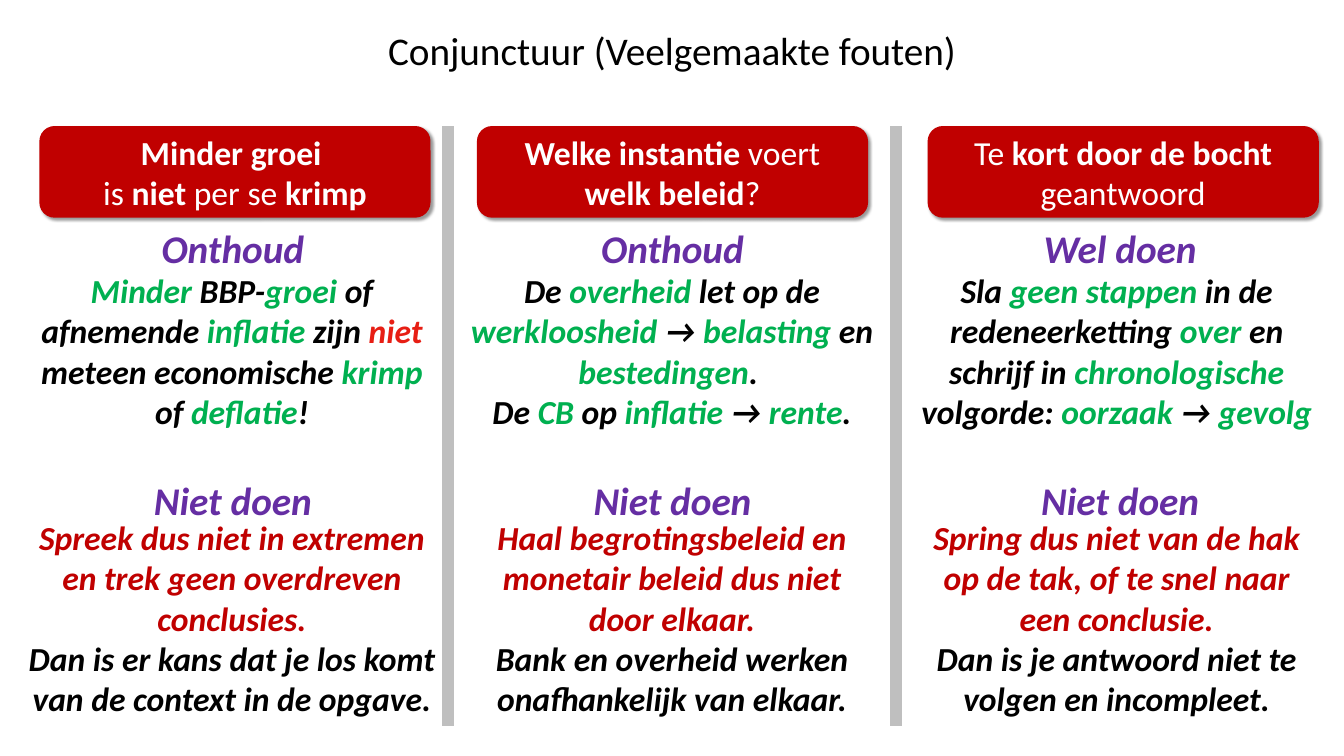
"""Build a slide on common mistakes about the business cycle."""
from dataclasses import dataclass

from lxml import etree
from pptx import Presentation
from pptx.dml.color import RGBColor
from pptx.enum.shapes import MSO_CONNECTOR, MSO_SHAPE
from pptx.enum.text import MSO_ANCHOR, PP_ALIGN
from pptx.oxml.ns import qn
from pptx.util import Inches, Pt

CENTER = PP_ALIGN.CENTER
MIDDLE = MSO_ANCHOR.MIDDLE
ROUNDED = MSO_SHAPE.ROUNDED_RECTANGLE
STRAIGHT = MSO_CONNECTOR.STRAIGHT


@dataclass(frozen=True)
class Theme:
    """Colours, type sizes and font of the slide."""
    font: str = "Calibri"
    large: int = 28
    body: int = 24
    black: str = "000000"
    white: str = "FFFFFF"
    crimson: str = "C00000"
    red: str = "E71E14"
    green: str = "00B050"
    purple: str = "652EA3"
    grey: str = "BFBFBF"

    def formats(self):
        """Return the format values of each text style."""
        header = {"size": self.body, "color": self.white}
        strong = {"size": self.body, "bold": True, "italic": True}
        return {
            "title": {"size": self.large, "color": self.black},
            "header": header,
            "header bold": {**header, "bold": True},
            "heading": {**strong, "size": self.large, "color": self.purple},
            "plain": {**strong, "color": self.black},
            "key": {**strong, "color": self.green},
            "not": {**strong, "color": self.red},
            "warning": {**strong, "color": self.crimson},
        }


class SlideBuilder:
    """Adds styled elements to the current slide."""

    def __init__(self, slide, theme):
        """Keep the slide and its style."""
        self.slide = slide
        self.theme = theme
        self.formats = theme.formats()

    def fill_text(self, frame, paragraphs):
        """Fill a frame with centred paragraphs of (style, text) spans."""
        frame.word_wrap = True
        for index, spans in enumerate(paragraphs):
            para = frame.add_paragraph() if index else frame.paragraphs[0]
            para.alignment = CENTER
            for style, text in spans:
                span = para.add_run()
                span.text = text
                span.font.name = self.theme.font
                for name, value in self.formats[style].items():
                    if name == "color":
                        span.font.color.rgb = RGBColor.from_string(value)
                    elif name == "size":
                        span.font.size = Pt(value)
                    else:
                        setattr(span.font, name, value)

    def text(self, left, top, width, height, paragraphs):
        """Add a text box."""
        lengths = map(Inches, (left, top, width, height))
        box = self.slide.shapes.add_textbox(*lengths)
        self.fill_text(box.text_frame, paragraphs)

    def header(self, left, top, width, height, paragraphs):
        """Add a rounded column header with a soft shadow."""
        lengths = map(Inches, (left, top, width, height))
        box = self.slide.shapes.add_shape(ROUNDED, *lengths)
        box.fill.solid()
        box.fill.fore_color.rgb = RGBColor.from_string(self.theme.crimson)
        box.line.fill.background()
        box.shadow.inherit = False
        effects = box._element.spPr.find(qn("a:effectLst"))
        shadow = etree.SubElement(
            effects, qn("a:outerShdw"), blurRad=str(Pt(2)), dist=str(Pt(2)),
            dir="2700000", algn="tl", rotWithShape="0")
        color = etree.SubElement(shadow, qn("a:srgbClr"), val=self.theme.black)
        etree.SubElement(color, qn("a:alpha"), val="40000")
        box.text_frame.vertical_anchor = MIDDLE
        self.fill_text(box.text_frame, paragraphs)

    def divider(self, left, top, bottom):
        """Add a thick vertical line between columns."""
        ends = map(Inches, (left, top, left, bottom))
        line = self.slide.shapes.add_connector(STRAIGHT, *ends)
        line.line.color.rgb = RGBColor.from_string(self.theme.grey)
        line.line.width = Pt(8.75)
        etree.SubElement(line._element.spPr, qn("a:effectLst"))


COLUMNS = [
    {
        "header_left": 0.39, "center": 2.31,
        "advice_box": (0.16, 4.28), "warning_box": (0.16, 4.28),
        "header": [
            [("header bold", "Minder groei ")],
            [("header", "is "), ("header bold", "niet"),
             ("header", " per se "), ("header bold", "krimp")]],
        "heading": "Onthoud",
        "advice": [
            [("key", "Minder"), ("plain", " BBP-"), ("key", "groei"),
             ("plain", " of afnemende "), ("key", "inflatie"),
             ("plain", " zijn "), ("not", "niet "),
             ("plain", "meteen economische "), ("key", "krimp"),
             ("plain", " of "), ("key", "deflatie"), ("plain", "!")]],
        "warning": "Spreek dus niet in extremen en trek geen overdreven conclusies.",
        "reason": "Dan is er kans dat je los komt van de context in de opgave.",
    },
    {
        "header_left": 4.73, "center": 6.67,
        "advice_box": (4.35, 4.63), "warning_box": (4.57, 4.19),
        "header": [
            [("header bold", "Welke instantie"), ("header", " voert "),
             ("header bold", "welk beleid"), ("header", "?")]],
        "heading": "Onthoud",
        "advice": [
            [("plain", "De "), ("key", "overheid"), ("plain", " let op de "),
             ("key", "werkloosheid "), ("plain", "→ "), ("key", "belasting"),
             ("plain", " en "), ("key", "bestedingen"), ("plain", ". ")],
            [("plain", "De "), ("key", "CB"), ("plain", " op "),
             ("key", "inflatie "), ("plain", "→ "), ("key", "rente"),
             ("plain", ".")]],
        "warning": "Haal begrotingsbeleid en monetair beleid dus niet door elkaar.",
        "reason": "Bank en overheid werken onafhankelijk van elkaar.",
    },
    {
        "header_left": 9.2, "center": 11.11,
        "advice_box": (8.98, 4.19), "warning_box": (8.98, 4.19),
        "header": [
            [("header", "Te "), ("header bold", "kort door de bocht "),
             ("header", "geantwoord")]],
        "heading": "Wel doen",
        "advice": [
            [("plain", "Sla "), ("key", "geen stappen"),
             ("plain", " in de redeneerketting "), ("key", "over"),
             ("plain", " en schrijf in "), ("key", "chronologische"),
             ("plain", " volgorde: "), ("key", "oorzaak "), ("plain", "→"),
             ("key", " gevolg")]],
        "warning": "Spring dus niet van de hak op de tak, of te snel naar een conclusie.",
        "reason": "Dan is je antwoord niet te volgen en incompleet.",
    },
]


def main():
    """Build and save the deck."""
    deck = Presentation()
    deck.slide_width, deck.slide_height = Inches(13.33), Inches(7.5)
    page = SlideBuilder(deck.slides.add_slide(deck.slide_layouts[6]), Theme())
    page.text(2.34, 0.21, 8.65, 0.57,
              [[("title", "Conjunctuur (Veelgemaakte fouten)")]])
    for left in (4.44, 8.89):
        page.divider(left, 1.25, 7.2)
    for column in COLUMNS:
        page.header(column["header_left"], 1.25, 3.88, 0.91, column["header"])
        left, width = column["warning_box"]
        page.text(left, 5.08, width, 2.12, [
            [("warning", column["warning"])], [("plain", column["reason"])]])
        left, width = column["advice_box"]
        page.text(left, 2.63, width, 1.72, column["advice"])
        for heading, top, width in ((column["heading"], 2.18, 1.74),
                                    ("Niet doen", 4.68, 2.17)):
            page.text(column["center"] - width / 2, top, width, 0.57,
                      [[("heading", heading)]])
    deck.save("out.pptx")


if __name__ == "__main__":
    main()
